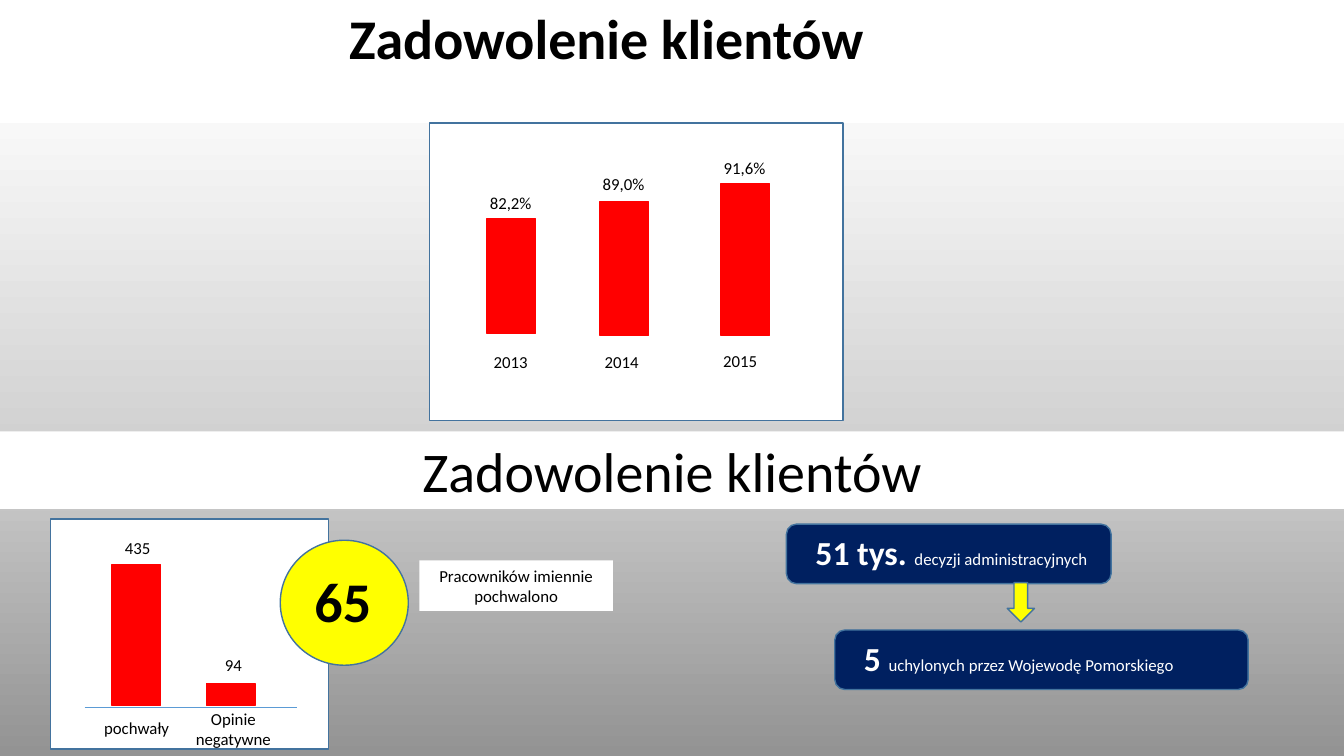
from copy import deepcopy

from lxml.etree import SubElement
from pptx import Presentation
from pptx.dml.color import RGBColor
from pptx.enum.shapes import MSO_CONNECTOR, MSO_SHAPE
from pptx.enum.text import MSO_ANCHOR, MSO_AUTO_SIZE, PP_ALIGN
from pptx.oxml.ns import qn
from pptx.util import Inches, Pt

BLACK = RGBColor(0x00, 0x00, 0x00)
WHITE = RGBColor(0xFF, 0xFF, 0xFF)
RED = RGBColor(0xFF, 0x00, 0x00)
YELLOW = RGBColor(0xFF, 0xFF, 0x00)
NAVY = RGBColor(0x00, 0x20, 0x60)
OUTLINE = RGBColor(0x43, 0x73, 0x9E)
AXIS = RGBColor(0x5B, 0x9B, 0xD5)
GRADIENT = (
    (0, RGBColor(0x93, 0x93, 0x93)),
    (0.5, RGBColor(0xD1, 0xD1, 0xD1)),
    (1, RGBColor(0xF8, 0xF8, 0xF8)),
)
FONT = "Calibri"
BAR_WIDTH = 0.48
LABEL_HEIGHT = 0.3
TITLE = "Zadowolenie klientów"


def add_box(slide, box, fill, line=None, kind=MSO_SHAPE.RECTANGLE):
    """Add a preset shape with a plain fill and an optional outline."""
    shape = slide.shapes.add_shape(kind, *map(Inches, box))
    shape.shadow.inherit = False
    shape.fill.solid()
    shape.fill.fore_color.rgb = fill
    if line is None:
        shape.line.fill.background()
    else:
        shape.line.color.rgb = line
        shape.line.width = Pt(1)
    return shape


def add_gradient_backdrop(slide, box):
    """Add the grey backdrop that darkens towards the bottom."""
    shape = add_box(slide, box, WHITE)
    shape.fill.gradient()
    shape.fill.gradient_angle = 90
    first_stop = shape._element.spPr.find(".//" + qn("a:gs"))
    first_stop.addnext(deepcopy(first_stop))
    for stop, (position, color) in zip(shape.fill.gradient_stops, GRADIENT):
        stop.position = position
        stop.color.rgb = color


def write_run(paragraph, text, size=12, color=BLACK, bold=False):
    """Append a formatted run to a paragraph."""
    run = paragraph.add_run()
    run.text = text
    run.font.name = FONT
    run.font.size = Pt(size)
    run.font.bold = bold
    run.font.color.rgb = color


def add_text(slide, box, text, align=PP_ALIGN.CENTER, fill=None, **run_format):
    """Add a wrapped text box and return its paragraph."""
    shape = slide.shapes.add_textbox(*map(Inches, box))
    if fill is not None:
        shape.fill.solid()
        shape.fill.fore_color.rgb = fill
    frame = shape.text_frame
    frame.word_wrap = True
    frame.auto_size = MSO_AUTO_SIZE.SHAPE_TO_FIT_TEXT
    frame.vertical_anchor = MSO_ANCHOR.TOP
    paragraph = frame.paragraphs[0]
    paragraph.alignment = align
    write_run(paragraph, text, **run_format)
    return paragraph


def add_bar(slide, bar, value, value_at, category, category_box):
    """Add a red bar with its value above and its category below."""
    left, top, height = bar
    add_box(slide, (left, top, BAR_WIDTH, height), RED, RED)
    add_text(slide, (*value_at, 0.83, LABEL_HEIGHT), value)
    add_text(slide, category_box, category)


def add_axis(slide, left, right, top):
    """Add the thin base line under the opinion bars."""
    ends = map(Inches, (left, top, right, top))
    line = slide.shapes.add_connector(MSO_CONNECTOR.STRAIGHT, *ends)
    line.line.color.rgb = AXIS
    line.line.width = Pt(0.5)
    SubElement(line._element.spPr, qn("a:effectLst"))


def add_decision(slide, left, top, width, number, caption):
    """Add a navy banner with a large number and a small caption."""
    box = (left, top, width, 0.59)
    add_box(slide, box, NAVY, OUTLINE, MSO_SHAPE.ROUNDED_RECTANGLE)
    paragraph = add_text(
        slide, (left + 0.19, top + 0.03, 4.86, 0.5), number,
        align=PP_ALIGN.LEFT, size=24, color=WHITE, bold=True,
    )
    write_run(paragraph, caption, color=WHITE)


def main():
    """Build the customer satisfaction slide."""
    presentation = Presentation()
    presentation.slide_width = Inches(13.33)
    presentation.slide_height = Inches(7.5)
    slide = presentation.slides.add_slide(presentation.slide_layouts[6])

    add_text(slide, (0, -0.01, 12.03, 0.77), TITLE, fill=WHITE, size=40, bold=True)
    add_gradient_backdrop(slide, (0, 1.22, 13.33, 6.28))

    add_box(slide, (4.26, 1.22, 4.1, 2.95), WHITE, OUTLINE)
    for bar, value, value_at, year, year_box in (
        ((4.83, 2.17, 1.14), "82,2%", (4.65, 1.86), "2013", (4.65, 3.44, 0.83)),
        ((5.95, 2, 1.33), "89,0%", (5.77, 1.67), "2014", (5.75, 3.44, 0.83)),
        ((7.15, 1.82, 1.51), "91,6%", (6.97, 1.52), "2015", (6.87, 3.43, 0.94)),
    ):
        add_bar(slide, bar, value, value_at, year, (*year_box, LABEL_HEIGHT))

    add_text(slide, (0, 4.28, 13.33, 0.77), TITLE, fill=WHITE, size=40)

    add_box(slide, (0.5, 5.15, 2.76, 2.28), WHITE, OUTLINE)
    add_bar(slide, (1.11, 5.6, 1.4), "435", (0.95, 5.29),
            "pochwały", (0.87, 7.07, 0.97, LABEL_HEIGHT))
    add_bar(slide, (2.05, 6.78, 0.22), "94", (1.9, 6.45),
            "Opinie negatywne", (1.76, 6.98, 1.11, 0.5))
    add_axis(slide, 0.84, 2.95, 7.02)

    add_box(slide, (2.78, 5.36, 1.27, 1.24), YELLOW, OUTLINE, MSO_SHAPE.OVAL)
    add_text(slide, (2.7, 5.57, 1.4, 0.77), "65", size=40, bold=True)
    add_text(slide, (4.16, 5.56, 1.92, 0.5),
             "Pracowników imiennie pochwalono", fill=WHITE)

    add_decision(slide, 7.8, 5.2, 3.22, "51 tys. ", "decyzji administracyjnych")
    add_decision(slide, 8.28, 6.25, 4.1, "5 ",
                 "uchylonych przez Wojewodę Pomorskiego")
    add_box(slide, (9.99, 5.78, 0.27, 0.39), YELLOW, OUTLINE, MSO_SHAPE.DOWN_ARROW)

    presentation.save("out.pptx")


if __name__ == "__main__":
    main()
